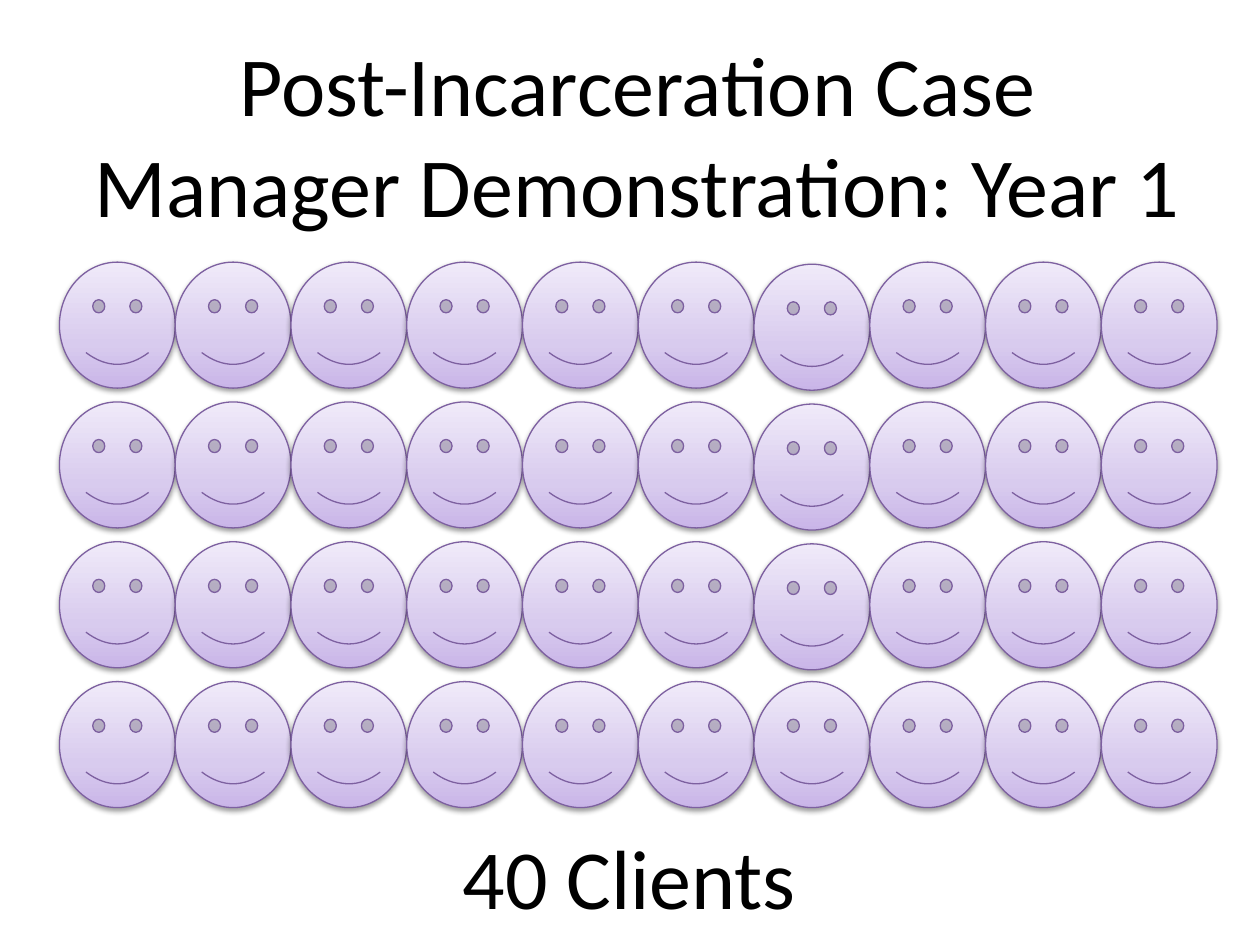
from dataclasses import dataclass

import lxml.etree
import pptx
import pptx.dml.color
import pptx.enum.shapes
import pptx.enum.text
import pptx.oxml.ns
import pptx.util
from pptx.util import Pt


@dataclass(frozen=True)
class Theme:
    font: str = "Calibri"
    text_size: float = 48
    text_color: str = "000000"
    outline_color: str = "7D60A0"
    outline_width: float = 0.75
    face_stops: tuple = ((0, "C9B5E8"), (35, "D8CBEE"), (100, "F0EAF9"))
    shadow_color: str = "000000"
    shadow_opacity: int = 38
    shadow_blur: float = 3.1
    shadow_distance: float = 1.6


@dataclass(frozen=True)
class Box:
    left: float
    top: float
    width: float
    height: float

    def lengths(self) -> tuple:
        return Pt(self.left), Pt(self.top), Pt(self.width), Pt(self.height)


@dataclass(frozen=True)
class FaceGrid:
    left: float = 34
    top: float = 149.8
    column_step: float = 66.15
    row_step: float = 79.9
    face_width: float = 66.15
    face_height: float = 72
    rows: int = 4
    columns: int = 10
    lowered_column: int = 6
    lowered_rows: int = 3
    lowered_by: float = 1.2

    def cell(self, row: int, column: int) -> Box:
        lowered = column == self.lowered_column and row < self.lowered_rows
        return Box(
            self.left + column * self.column_step,
            self.top + row * self.row_step + (self.lowered_by if lowered else 0),
            self.face_width,
            self.face_height,
        )


THEME = Theme()
TITLE_BOX = Box(44.64, 15.12, 639.36, 123.84)
CAPTION_BOX = Box(44.64, 468, 630, 65.5)


def rgb(color: str) -> pptx.dml.color.RGBColor:
    return pptx.dml.color.RGBColor.from_string(color)


def add_child(parent, tag: str, **attributes):
    element = lxml.etree.SubElement(parent, pptx.oxml.ns.qn(tag))
    for name, value in attributes.items():
        element.set(name, str(value))
    return element


def fill_face(face) -> None:
    """Shade the face from dark at the bottom to light at the top."""
    face.fill.gradient()
    face.fill.gradient_angle = 90
    stops = face.element.spPr.find(".//" + pptx.oxml.ns.qn("a:gsLst"))
    for stop in list(stops):
        stops.remove(stop)
    for position, color in THEME.face_stops:
        stop = add_child(stops, "a:gs", pos=position * 1000)
        add_child(stop, "a:srgbClr", val=color)


def add_shadow(face) -> None:
    face.shadow.inherit = False
    effects = face.element.spPr.find(pptx.oxml.ns.qn("a:effectLst"))
    shadow = add_child(
        effects, "a:outerShdw",
        blurRad=int(Pt(THEME.shadow_blur)), dist=int(Pt(THEME.shadow_distance)),
        dir=90 * 60000, rotWithShape=0,
    )
    color = add_child(shadow, "a:srgbClr", val=THEME.shadow_color)
    add_child(color, "a:alpha", val=THEME.shadow_opacity * 1000)


def add_face(shapes, box: Box) -> None:
    face = shapes.add_shape(pptx.enum.shapes.MSO_SHAPE.SMILEY_FACE, *box.lengths())
    fill_face(face)
    face.line.color.rgb = rgb(THEME.outline_color)
    face.line.width = Pt(THEME.outline_width)
    add_shadow(face)


def add_faces(slide, grid: FaceGrid) -> None:
    group = slide.shapes.add_group_shape()
    for row in range(grid.rows):
        for column in range(grid.columns):
            add_face(group.shapes, grid.cell(row, column))


def write_centered(shape, text: str) -> None:
    frame = shape.text_frame
    frame.text = text
    frame.word_wrap = True
    frame.auto_size = pptx.enum.text.MSO_AUTO_SIZE.SHAPE_TO_FIT_TEXT
    frame.vertical_anchor = pptx.enum.text.MSO_ANCHOR.TOP
    para = frame.paragraphs[0]
    para.alignment = pptx.enum.text.PP_ALIGN.CENTER
    for span in para.runs:
        span.font.name = THEME.font
        span.font.size = Pt(THEME.text_size)
        span.font.color.rgb = rgb(THEME.text_color)


def main() -> None:
    deck = pptx.Presentation()
    deck.slide_width, deck.slide_height = Pt(720), Pt(540)
    page = deck.slides.add_slide(deck.slide_layouts.get_by_name("Title Only"))

    title = page.shapes.title
    title.left, title.top, title.width, title.height = TITLE_BOX.lengths()
    write_centered(title, "Post-Incarceration Case Manager Demonstration: Year 1")

    add_faces(page, FaceGrid())
    write_centered(page.shapes.add_textbox(*CAPTION_BOX.lengths()), "40 Clients")

    deck.save("out.pptx")


if __name__ == "__main__":
    main()
